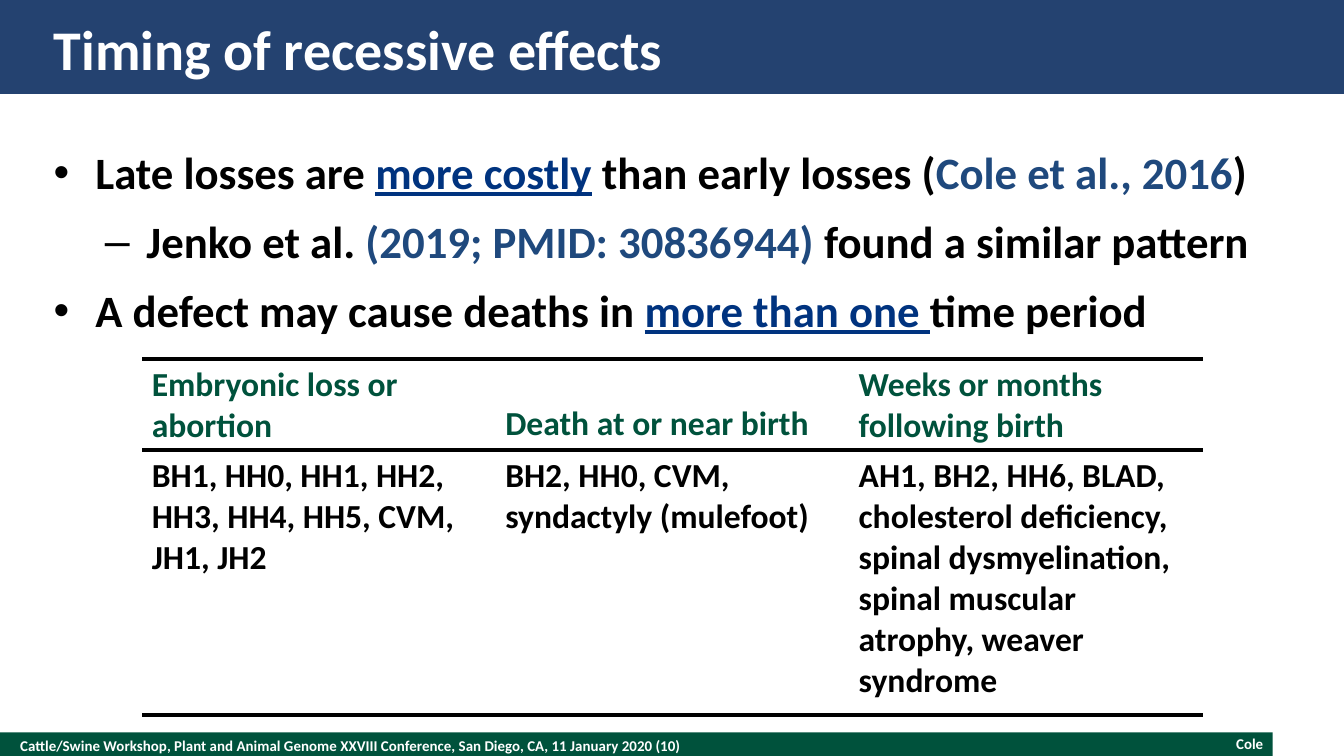
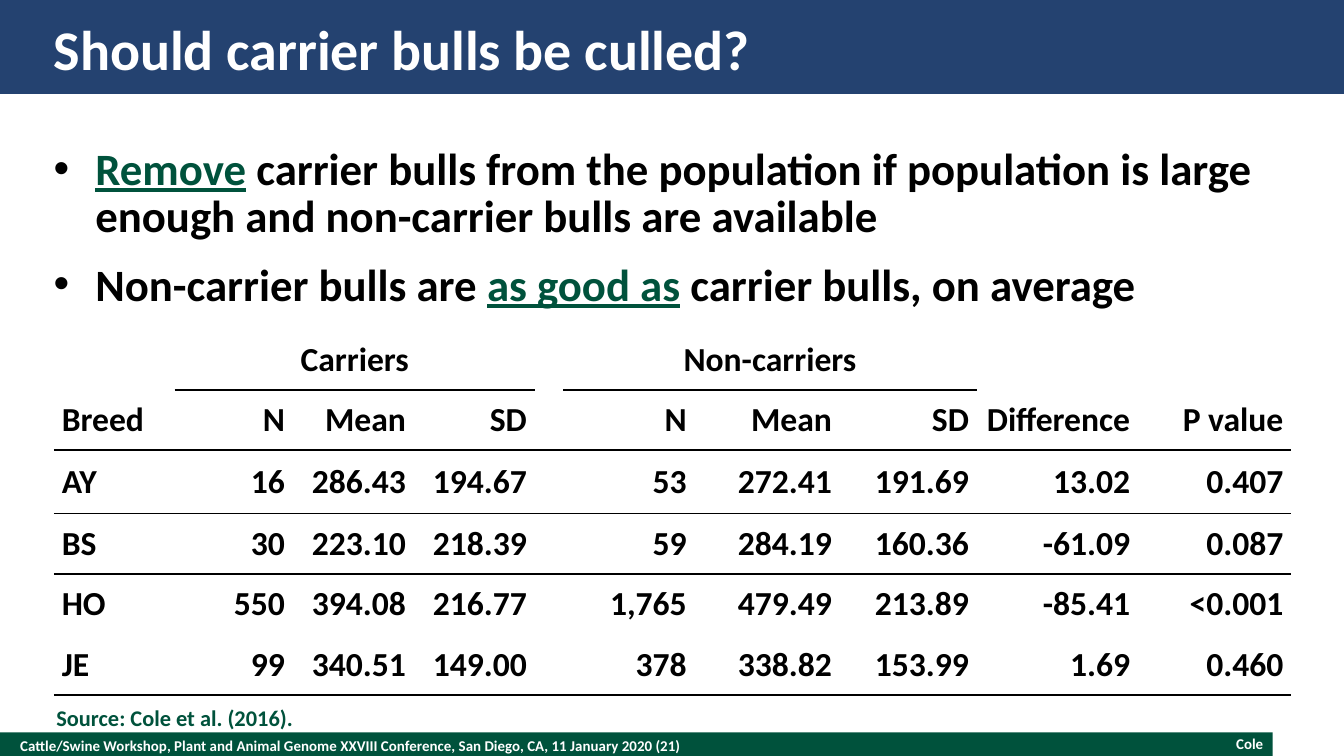
from dataclasses import dataclass
from itertools import product

from lxml.etree import SubElement
from pptx import Presentation
from pptx.dml.color import RGBColor
from pptx.enum.shapes import MSO_SHAPE
from pptx.enum.text import MSO_ANCHOR, PP_ALIGN
from pptx.oxml.ns import qn
from pptx.slide import Slide
from pptx.table import _Cell
from pptx.text.text import Font, TextFrame, _Paragraph
from pptx.util import Emu, Inches, Pt

FONT = "Calibri"
BLACK, WHITE = "000000", "FFFFFF"
GREEN, BAND_BLUE = "00523C", "244270"
STRONG_BLUE, CITATION_BLUE = "00337F", "1F497D"
GRID_COLUMNS, GRID_ROWS = 100, 56.25
PLAIN_TABLE_STYLE = "{2D5ABB26-0587-4C30-8999-92F81FD0307C}"
VENUE = ("Cattle/Swine Workshop, Plant and Animal Genome XXVIII Conference, "
         "San Diego, CA, 11 January 2020")


@dataclass(frozen=True)
class Area:
    """A rectangle in grid columns and rows."""
    column: float
    row: float
    columns: float
    rows: float

    def box(self) -> tuple[Emu, Emu, Emu, Emu]:
        """Return left, top, width and height."""
        return grid(self.column), grid(self.row), grid(self.columns), grid(self.rows)


@dataclass(frozen=True)
class Phrase:
    """A stretch of text in one style."""
    text: str
    color: str = BLACK
    underline: bool = False


@dataclass(frozen=True)
class Point:
    """A bullet point with its indent level."""
    phrases: tuple[Phrase, ...]
    level: int = 0


@dataclass(frozen=True)
class Rule:
    """A horizontal table line above the row numbered boundary."""
    boundary: int
    first: int
    last: int


@dataclass(frozen=True)
class Grid:
    """A table's place, measures, lines and wording."""
    area: Area
    widths: tuple[float, ...]
    heights: tuple[float, ...]
    margins: tuple[float, float]
    rules: tuple[Rule, ...]
    weight: float
    wording: tuple[tuple[str, ...], ...]


TITLE_AREA = Area(4, 1, 92, 5.2)
TITLE_BAND = Area(0, 0, GRID_COLUMNS, 7)
FOOTER_BAND = Area(0, 54.5, 94.7, 2)
VENUE_AREA = Area(1.5, 54.5, 65, 2)
SPEAKER_AREA = Area(72, 54.7, 22, 1.3)
SOURCE_AREA = Area(2.9, 51.9, 19.9, 3)

TIMING_POINTS = (
    Point((Phrase("Late losses are "), Phrase("more costly", STRONG_BLUE, True),
           Phrase(" than early losses ("), Phrase("Cole et al., 2016", CITATION_BLUE),
           Phrase(")"))),
    Point((Phrase("Jenko et al. "), Phrase("(2019; PMID: 30836944)", CITATION_BLUE),
           Phrase(" found a similar pattern")), level=1),
    Point((Phrase("A defect may cause deaths in "),
           Phrase("more than one ", STRONG_BLUE, True), Phrase("time period"))),
)
CULLING_POINTS = (
    Point((Phrase("Remove", GREEN, True),
           Phrase(" carrier bulls from the population if population is large enough "
                  "and non-carrier bulls are available"))),
    Point((Phrase("Non-carrier bulls are "), Phrase("as good as", GREEN, True),
           Phrase(" carrier bulls, on average"))),
)
TIMING_TABLE = Grid(
    Area(10.6, 26.7, 78.9, 26.4), (26.3,) * 3, (6.7, 19.7), (0.7, 0.4),
    tuple(Rule(boundary, 0, 2) for boundary in range(3)), 2.25,
    (("Embryonic loss or abortion", "Death at or near birth",
      "Weeks or months following birth"),
     ("BH1, HH0, HH1, HH2, HH3, HH4, HH5, CVM, JH1, JH2",
      "BH2, HH0, CVM, syndactyly (mulefoot)",
      "AH1, BH2, HH6, BLAD, cholesterol deficiency, spinal dysmyelination, "
      "spinal muscular atrophy, weaver syndrome")),
)
BREED_TABLE = Grid(
    Area(4, 24.5, 92, 27.2), (9, 8.8, 9, 9, 2.1, 9.8, 10.8, 10.2, 12, 11.4),
    (4.5, 4.5, 4.7, 4.5, 4.5, 4.5), (0.6, 0),
    (Rule(1, 1, 3), Rule(1, 5, 7), *(Rule(boundary, 0, 9) for boundary in (2, 3, 6))), 1,
    (("", "Carriers", "", "", "", "Non-carriers", "", "", "", ""),
     ("Breed", "N", "Mean", "SD", "", "N", "Mean", "SD", "Difference", "P value"),
     ("AY", "16", "286.43", "194.67", "", "53", "272.41", "191.69", "13.02", "0.407"),
     ("BS", "30", "223.10", "218.39", "", "59", "284.19", "160.36", "-61.09", "0.087"),
     ("HO", "550", "394.08", "216.77", "", "1,765", "479.49", "213.89", "-85.41", "<0.001"),
     ("JE", "99", "340.51", "149.00", "", "378", "338.82", "153.99", "1.69", "0.460")),
)


def grid(units: float) -> Emu:
    """Convert grid units to a length."""
    return Inches(round(units / 10, 3))


def rgb(color: str) -> RGBColor:
    """Convert a hex string to a colour."""
    return RGBColor.from_string(color)


def style(font: Font, size: float, color: str) -> None:
    """Apply the deck's bold typeface."""
    font.name, font.size, font.bold = FONT, Pt(size), True
    font.color.rgb = rgb(color)


def clear_margins(frame: TextFrame) -> None:
    """Remove the insets and let the text wrap."""
    frame.margin_left = frame.margin_right = frame.margin_top = frame.margin_bottom = 0
    frame.word_wrap = True


def add_band(slide: Slide, area: Area, color: str) -> None:
    """Draw a solid band."""
    band = slide.shapes.add_shape(MSO_SHAPE.RECTANGLE, *area.box())
    band.shadow.inherit = False
    band.fill.solid()
    band.fill.fore_color.rgb = rgb(color)
    band.line.fill.background()


def add_label(slide: Slide, area: Area, text: str, size: float, color: str,
              align: PP_ALIGN) -> TextFrame:
    """Write a one-line label."""
    frame = slide.shapes.add_textbox(*area.box()).text_frame
    label = frame.paragraphs[0]
    label.text, label.alignment = text, align
    style(label.font, size, color)
    return frame


def add_frame(deck: Presentation, heading: str, number: int) -> Slide:
    """Add a slide with its bands, footer and title."""
    slide = deck.slides.add_slide(deck.slide_layouts[5])
    add_band(slide, FOOTER_BAND, GREEN)
    add_band(slide, TITLE_BAND, BAND_BLUE)
    for area, text, align in ((VENUE_AREA, f"{VENUE} ({number})", PP_ALIGN.LEFT),
                              (SPEAKER_AREA, "Cole", PP_ALIGN.RIGHT)):
        footer = add_label(slide, area, text, 8, WHITE, align)
        clear_margins(footer)
        footer.vertical_anchor = MSO_ANCHOR.MIDDLE
    title = slide.shapes.title
    title.left, title.top, title.width, title.height = TITLE_AREA.box()
    clear_margins(title.text_frame)
    title.text_frame.vertical_anchor = MSO_ANCHOR.MIDDLE
    title.text_frame.text = heading
    paragraph = title.text_frame.paragraphs[0]
    paragraph.alignment = PP_ALIGN.LEFT
    style(paragraph.font, 30, WHITE)
    title._element.getparent().append(title._element)
    return slide


def add_bullet(paragraph: _Paragraph, level: int) -> None:
    """Give a paragraph the hanging bullet of its level."""
    properties = paragraph._p.get_or_add_pPr()
    properties.set("marL", str(grid(3.1 + 3.8 * level)))
    properties.set("indent", str(-grid(3.1)))
    SubElement(SubElement(properties, qn("a:buClr")), qn("a:srgbClr"), val=BLACK)
    SubElement(properties, qn("a:buFont"), typeface="Arial")
    SubElement(properties, qn("a:buChar"), char="•–"[level])


def add_points(slide: Slide, row: float, points: tuple[Point, ...]) -> None:
    """Write the bullet points."""
    frame = slide.shapes.add_textbox(*Area(4, row, 92, 40).box()).text_frame
    clear_margins(frame)
    for index, point in enumerate(points):
        paragraph = frame.add_paragraph() if index else frame.paragraphs[0]
        paragraph.level = point.level
        add_bullet(paragraph, point.level)
        paragraph.line_spacing, paragraph.space_after = Pt(25), Pt(12)
        style(paragraph.font, 24, BLACK)
        for phrase in point.phrases:
            run = paragraph.add_run()
            run.text = phrase.text
            run.font.color.rgb = rgb(phrase.color)
            run.font.underline = phrase.underline


def add_edge(cell: _Cell, edge: str, weight: float) -> None:
    """Draw one black cell border."""
    line = SubElement(cell._tc.get_or_add_tcPr(), qn(f"a:{edge}"), w=str(Pt(weight)))
    SubElement(SubElement(line, qn("a:solidFill")), qn("a:srgbClr"), val=BLACK)


def format_cell(cell: _Cell, content: Grid, row: int, column: int, color: str,
                align: PP_ALIGN, anchor: MSO_ANCHOR) -> None:
    """Fill in a table cell and draw its lines."""
    for edge, boundary in (("lnT", row), ("lnB", row + 1)):
        if any(rule.boundary == boundary and rule.first <= column <= rule.last
               for rule in content.rules):
            add_edge(cell, edge, content.weight)
    cell.fill.background()
    side, end = map(grid, content.margins)
    cell.margin_left = cell.margin_right = side
    cell.margin_top = cell.margin_bottom = end
    cell.vertical_anchor = anchor
    cell.text = content.wording[row][column]
    paragraph = cell.text_frame.paragraphs[0]
    paragraph.alignment = align
    style(paragraph.font, 18, color)


def timing_look(row: int, column: int) -> tuple[str, PP_ALIGN, MSO_ANCHOR]:
    """Style the timing table: green headings set low."""
    if row == 0:
        return GREEN, PP_ALIGN.LEFT, MSO_ANCHOR.BOTTOM
    return BLACK, PP_ALIGN.LEFT, MSO_ANCHOR.TOP


def breed_look(row: int, column: int) -> tuple[str, PP_ALIGN, MSO_ANCHOR]:
    """Style the breed table: centred groups, right-set figures."""
    figures = PP_ALIGN.RIGHT if column else PP_ALIGN.LEFT
    return BLACK, figures if row else PP_ALIGN.CENTER, MSO_ANCHOR.MIDDLE


def add_grid(slide: Slide, content: Grid, look: callable,
             groups: tuple[tuple[int, int], ...] = ()) -> None:
    """Draw a table, joining the heading cells of each group."""
    rows, columns = len(content.heights), len(content.widths)
    table = slide.shapes.add_table(rows, columns, *content.area.box()).table
    table.first_row = table.horz_banding = False
    table._tbl.find(f".//{qn('a:tableStyleId')}").text = PLAIN_TABLE_STYLE
    for column, width in zip(table.columns, content.widths):
        column.width = grid(width)
    for row, height in zip(table.rows, content.heights):
        row.height = grid(height)
    for row, column in product(range(rows), range(columns)):
        format_cell(table.cell(row, column), content, row, column, *look(row, column))
    for first, last in groups:
        table.cell(0, first).merge(table.cell(0, last))


def main() -> None:
    """Build and save the deck."""
    deck = Presentation()
    deck.slide_width, deck.slide_height = grid(GRID_COLUMNS), grid(GRID_ROWS)

    timing = add_frame(deck, "Timing of recessive effects", 10)
    add_points(timing, 11.3, TIMING_POINTS)
    add_grid(timing, TIMING_TABLE, timing_look)

    culling = add_frame(deck, "Should carrier bulls be culled?", 21)
    add_points(culling, 11, CULLING_POINTS)
    add_grid(culling, BREED_TABLE, breed_look, groups=((1, 3), (5, 7)))
    source = add_label(culling, SOURCE_AREA, "Source: Cole et al. (2016).", 12, GREEN,
                       PP_ALIGN.RIGHT)
    source.word_wrap = False

    deck.save("out.pptx")


if __name__ == "__main__":
    main()
